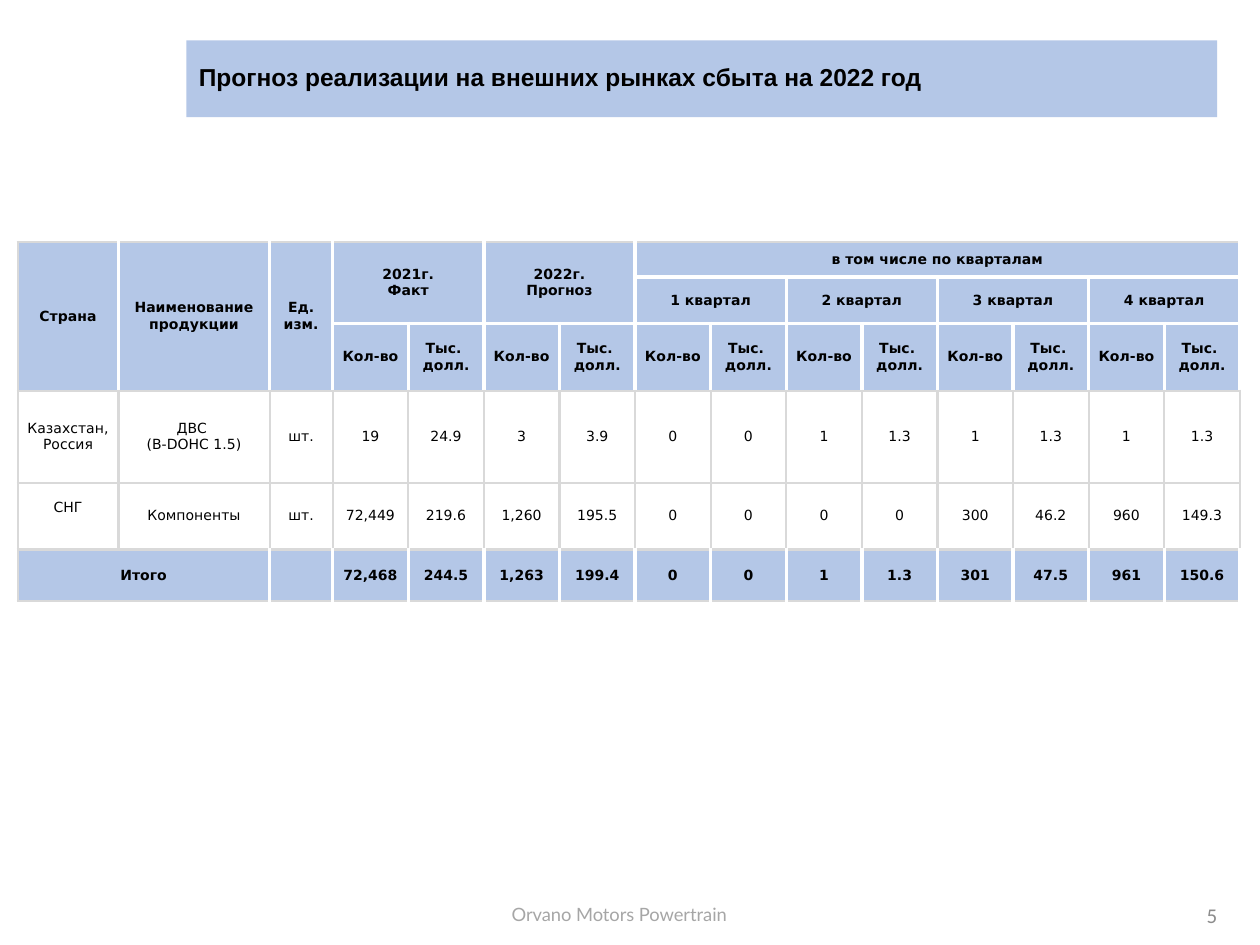
"""Build the slide with the 2022 export sales forecast table."""
from dataclasses import dataclass

import lxml.etree
import pptx
import pptx.dml.color
import pptx.enum.shapes
import pptx.enum.text
import pptx.oxml.ns
import pptx.presentation
import pptx.slide
import pptx.table
import pptx.text.text
import pptx.util

ALIGN = pptx.enum.text.PP_ALIGN
MIDDLE = pptx.enum.text.MSO_ANCHOR.MIDDLE
TOP = pptx.enum.text.MSO_ANCHOR.TOP


@dataclass(frozen=True)
class TextStyle:
    """Font and alignment of a text."""
    name: str
    size: float
    color: str
    bold: bool = False
    alignment: ALIGN = ALIGN.CENTER
    line_spacing: float = 1.0


@dataclass(frozen=True)
class Theme:
    """Colours, line widths and type styles of the slide."""
    accent: str = "B4C7E7"
    paper: str = "FFFFFF"
    grey_line: tuple[str, float] = ("D9D9D9", 1.5)
    white_line: tuple[str, float] = ("FFFFFF", 2.25)
    title: TextStyle = TextStyle("Arial", 14, "000000", True, ALIGN.LEFT, 0.9)
    strong: TextStyle = TextStyle("DejaVu Sans", 8, "000000", True)
    body: TextStyle = TextStyle("DejaVu Sans", 8, "000000")
    footer: TextStyle = TextStyle("Lato", 10.5, "A6A6A6")
    number: TextStyle = TextStyle("Calibri", 12, "8C8C8C", alignment=ALIGN.RIGHT)


@dataclass(frozen=True)
class Box:
    """Place in columns and rows of the slide grid."""
    left: float
    top: float
    width: float
    height: float

    def lengths(self) -> tuple[int, ...]:
        """Return the place in slide units."""
        return tuple(grid(value) for value in (self.left, self.top, self.width, self.height))


@dataclass(frozen=True)
class TableCell:
    """Text of a table cell with its position and span."""
    row: int
    column: int
    text: str
    rows: int = 1
    columns: int = 1
    side_inset: float = 0
    end_inset: float = 0
    bottom_inset: float = 0


THEME = Theme()
GRID_COLUMNS, GRID_ROWS = 100, 75
COLUMN_WIDTHS = [8, 12, 5] + [6] * 12
ROW_HEIGHTS = [2.8, 3.6, 5.35, 7.3, 5.3, 4.1]
HEADER_ROWS = 3
TOTAL_ROW = 5
TITLE_BOX = Box(14.8, 3.2, 81.8, 6.1)
TABLE_BOX = Box(1.4, 19.2, sum(COLUMN_WIDTHS), sum(ROW_HEIGHTS))
FOOTER_BOX = Box(37.9, 71.2, 22.5, 2.8)
NUMBER_BOX = Box(75.1, 70.6, 22.5, 4)
INSETS = {"side_inset": 1, "end_inset": 0.5, "bottom_inset": 0.5}
HEADINGS = [
    (0, 0, "Страна", 3, 1),
    (0, 1, "Наименование продукции", 3, 1),
    (0, 2, "Ед. изм.", 3, 1),
    (0, 3, "2021г.\nФакт", 2, 2),
    (0, 5, "2022г.\nПрогноз", 2, 2),
    (0, 7, "в том числе по кварталам", 1, 8),
] + [(1, 5 + 2 * quarter, f"{quarter} квартал", 1, 2) for quarter in range(1, 5)]
PRODUCTS = [
    ["Казахстан, Россия", "ДВС \n(B-DOHC 1.5)", "шт.", "19", "24.9", "3", "3.9",
     "0", "0", "1", "1.3", "1", "1.3", "1", "1.3"],
    ["СНГ", "Компоненты", "шт.", "72,449", "219.6", "1,260", "195.5",
     "0", "0", "0", "0", "300", "46.2", "960", "149.3"],
]
TOTALS = ["", "72,468", "244.5", "1,263", "199.4", "0", "0", "1", "1.3",
          "301", "47.5", "961", "150.6"]


def grid(value: float) -> int:
    """Convert grid steps to a length."""
    return pptx.util.Inches(value / 10)


def color(value: str) -> pptx.dml.color.RGBColor:
    """Return the colour for a hex value."""
    return pptx.dml.color.RGBColor.from_string(value)


def write_text(frame: pptx.text.text.TextFrame, text: str, style: TextStyle) -> None:
    """Write the lines of a text in one style."""
    frame.text = text
    frame.word_wrap = True
    font_values = {"name": style.name, "size": pptx.util.Pt(style.size), "bold": style.bold}
    for paragraph in frame.paragraphs:
        paragraph.alignment = style.alignment
        paragraph.line_spacing = style.line_spacing
        for run in paragraph.runs:
            for name, value in font_values.items():
                setattr(run.font, name, value)
            run.font.color.rgb = color(style.color)
        if not paragraph.runs:
            end = lxml.etree.SubElement(paragraph._p, pptx.oxml.ns.qn("a:endParaRPr"))
            end.set("sz", str(int(style.size * 100)))


def add_text(slide: pptx.slide.Slide, box: Box, text: str, style: TextStyle,
             anchor: pptx.enum.text.MSO_ANCHOR) -> None:
    """Add a text box."""
    shape = slide.shapes.add_textbox(*box.lengths())
    write_text(shape.text_frame, text, style)
    shape.text_frame.vertical_anchor = anchor


def add_title(slide: pptx.slide.Slide, text: str) -> None:
    """Add the title band."""
    shape = slide.shapes.add_shape(pptx.enum.shapes.MSO_SHAPE.RECTANGLE, *TITLE_BOX.lengths())
    shape.shadow.inherit = False
    shape.fill.solid()
    shape.fill.fore_color.rgb = color(THEME.accent)
    shape.line.fill.background()
    write_text(shape.text_frame, text, THEME.title)
    shape.text_frame.vertical_anchor = MIDDLE


def set_borders(cell: pptx.table._Cell, borders: dict[str, tuple[str, float]]) -> None:
    """Draw the borders of a table cell."""
    properties = cell._tc.get_or_add_tcPr()
    for side, (line_color, width) in borders.items():
        line = lxml.etree.SubElement(properties, pptx.oxml.ns.qn(f"a:ln{side}"))
        line.set("w", str(pptx.util.Pt(width)))
        fill = lxml.etree.SubElement(line, pptx.oxml.ns.qn("a:solidFill"))
        lxml.etree.SubElement(fill, pptx.oxml.ns.qn("a:srgbClr")).set("val", line_color)


def borders_for(entry: TableCell) -> dict[str, tuple[str, float]]:
    """Choose white lines inside blue areas and grey lines elsewhere."""
    end_row = entry.row + entry.rows
    blue = entry.row < HEADER_ROWS or entry.row == TOTAL_ROW
    white_sides = {
        "L": blue and entry.column > 0,
        "R": blue,
        "T": 0 < entry.row < HEADER_ROWS,
        "B": end_row < HEADER_ROWS,
    }
    return {side: THEME.white_line if white else THEME.grey_line
            for side, white in white_sides.items()}


def draw_cell(table: pptx.table.Table, entry: TableCell) -> None:
    """Fill, frame and label one cell with its span."""
    blue = entry.row < HEADER_ROWS or entry.row == TOTAL_ROW
    style = THEME.strong if blue else THEME.body
    margins = {"margin_left": entry.side_inset, "margin_right": entry.side_inset,
               "margin_top": entry.end_inset, "margin_bottom": entry.bottom_inset}
    for row in range(entry.row, entry.row + entry.rows):
        for column in range(entry.column, entry.column + entry.columns):
            cell = table.cell(row, column)
            is_origin = (row, column) == (entry.row, entry.column)
            set_borders(cell, borders_for(entry))
            cell.fill.solid()
            cell.fill.fore_color.rgb = color(THEME.accent if blue else THEME.paper)
            cell.vertical_anchor = MIDDLE
            for name, value in margins.items():
                setattr(cell, name, grid(value))
            write_text(cell.text_frame, entry.text if is_origin else "", style)
    if entry.rows * entry.columns > 1:
        last = table.cell(entry.row + entry.rows - 1, entry.column + entry.columns - 1)
        table.cell(entry.row, entry.column).merge(last)


def table_cells() -> list[TableCell]:
    """List all cells of the forecast table."""
    cells = [TableCell(*heading, **INSETS) for heading in HEADINGS]
    cells += [TableCell(2, column, "Кол-во" if column % 2 else "Тыс. \nдолл.")
              for column in range(3, len(COLUMN_WIDTHS))]
    cells += [TableCell(row, column, text, bottom_inset=1.3 if text == "СНГ" else 0)
              for row, texts in enumerate(PRODUCTS, HEADER_ROWS)
              for column, text in enumerate(texts)]
    cells.append(TableCell(TOTAL_ROW, 0, "Итого", columns=2))
    return cells + [TableCell(TOTAL_ROW, column, text) for column, text in enumerate(TOTALS, 2)]


def add_forecast_table(slide: pptx.slide.Slide) -> None:
    """Add the forecast table."""
    table = slide.shapes.add_table(
        len(ROW_HEIGHTS), len(COLUMN_WIDTHS), *TABLE_BOX.lengths()).table
    table.first_row = table.horz_banding = False
    for column, width in zip(table.columns, COLUMN_WIDTHS):
        column.width = grid(width)
    for row, height in zip(table.rows, ROW_HEIGHTS):
        row.height = grid(height)
    for entry in table_cells():
        draw_cell(table, entry)


def main() -> None:
    """Build and save the presentation."""
    presentation = pptx.Presentation()
    presentation.slide_width, presentation.slide_height = grid(GRID_COLUMNS), grid(GRID_ROWS)
    slide = presentation.slides.add_slide(presentation.slide_layouts[6])
    add_text(slide, FOOTER_BOX, "Orvano Motors Powertrain", THEME.footer, TOP)
    add_title(slide, "Прогноз реализации на внешних рынках сбыта на 2022 год")
    add_text(slide, NUMBER_BOX, "5", THEME.number, MIDDLE)
    add_forecast_table(slide)
    presentation.save("out.pptx")


if __name__ == "__main__":
    main()
